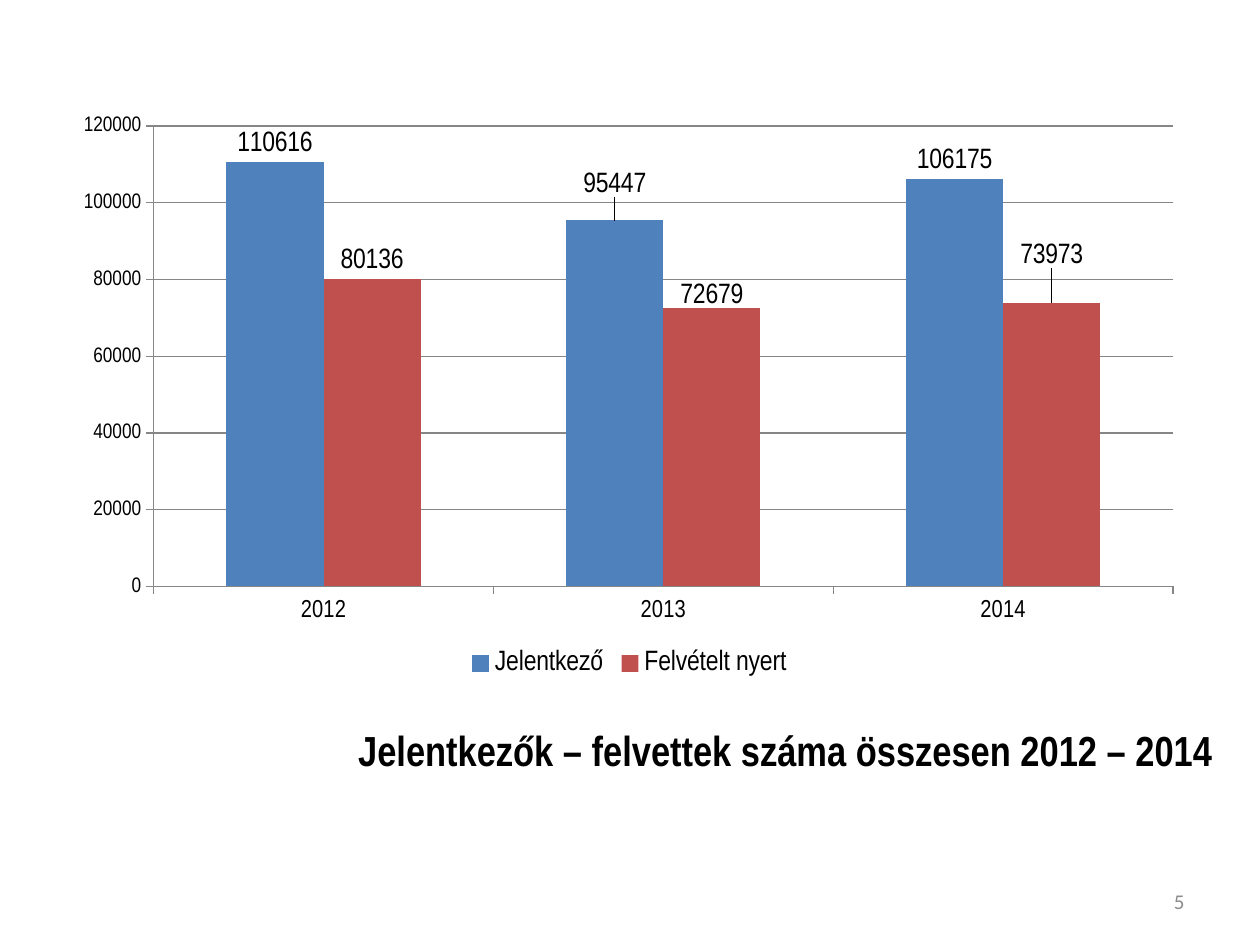
from lxml import etree
from pptx import Presentation
from pptx.chart.data import CategoryChartData
from pptx.dml.color import RGBColor
from pptx.enum.chart import (XL_CHART_TYPE, XL_LABEL_POSITION,
                             XL_LEGEND_POSITION, XL_TICK_MARK)
from pptx.enum.text import MSO_ANCHOR, PP_ALIGN
from pptx.oxml.ns import qn
from pptx.util import Inches, Pt

COLUMNS = XL_CHART_TYPE.COLUMN_CLUSTERED
OUTSIDE_END = XL_LABEL_POSITION.OUTSIDE_END
BOTTOM = XL_LEGEND_POSITION.BOTTOM
OUTSIDE = XL_TICK_MARK.OUTSIDE
MIDDLE = MSO_ANCHOR.MIDDLE
RIGHT = PP_ALIGN.RIGHT

NARROW = "Arial Narrow"
TITLE_ONLY = 5
YEARS = ["2012", "2013", "2014"]
# name, values, colour, vertical label shifts by point (shares of chart height)
SERIES = [
    ("Jelentkező", [110616, 95447, 106175], "4F81BD", {1: -0.03}),
    ("Felvételt nyert", [80136, 72679, 73973], "C0504D", {1: 0.01, 2: -0.05}),
]


def rgb(color):
    return RGBColor.from_string(color)


def set_font(font, size, name=NARROW, color="000000", bold=False):
    font.size = Pt(size)
    font.name = name
    font.bold = bold
    font.color.rgb = rgb(color)


def place(shape, left, top, width, height):
    shape.left, shape.top = Inches(left), Inches(top)
    shape.width, shape.height = Inches(width), Inches(height)


def write(shape, text, **fmt):
    tf = shape.text_frame
    tf.word_wrap = True
    tf.vertical_anchor = MIDDLE
    p = tf.paragraphs[0]
    p.alignment = RIGHT
    r = p.add_run()
    r.text = text
    set_font(r.font, **fmt)


def fill_layout(layout, **settings):
    """Write a manual chart layout; settings follow schema order."""
    manual = etree.SubElement(layout, qn("c:manualLayout"))
    for tag, value in settings.items():
        etree.SubElement(manual, qn(f"c:{tag}")).set("val", str(value))


def format_axis(axis, size):
    axis.major_tick_mark = OUTSIDE
    set_font(axis.tick_labels.font, size)
    axis.format.line.color.rgb = rgb("868686")


def format_series(series, color, shifts):
    series.format.fill.solid()
    series.format.fill.fore_color.rgb = rgb(color)
    labels = series.data_labels
    labels.show_value = True
    labels.position = OUTSIDE_END
    set_font(labels.font, 16)
    for index, shift in shifts.items():
        label = series.points[index].data_label
        label.position = OUTSIDE_END
        set_font(label.font, 16)
    for item, shift in zip(labels._element.findall(qn("c:dLbl")), shifts.values()):
        layout = etree.Element(qn("c:layout"))
        item.insert(1, layout)
        fill_layout(layout, x=0, y=shift)


def add_column_chart(s):
    data = CategoryChartData()
    data.categories = YEARS
    for name, values, *_ in SERIES:
        data.add_series(name, values)
    box = [Inches(n) for n in (0.5, 0.84, 8.99, 4.57)]
    chart = s.shapes.add_chart(COLUMNS, *box, data).chart
    set_font(chart.font, 10, "Calibri")
    chart.has_title = False

    chart.has_legend = True
    chart.legend.position = BOTTOM
    chart.legend.include_in_layout = False
    set_font(chart.legend.font, 16)

    format_axis(chart.category_axis, 14)
    axis = chart.value_axis
    format_axis(axis, 12)
    axis.minimum_scale, axis.maximum_scale, axis.major_unit = 0, 120000, 20000
    axis.has_major_gridlines = True
    axis.major_gridlines.format.line.color.rgb = rgb("868686")

    plot = chart.plots[0]
    plot.gap_width = 150
    plot.overlap = 0
    plot.vary_by_categories = False
    for series, (_, _, color, shifts) in zip(plot.series, SERIES):
        format_series(series, color, shifts)

    area = chart._chartSpace.chart.plotArea
    layout = area.find(qn("c:layout"))
    if layout is None:
        layout = etree.Element(qn("c:layout"))
        area.insert(0, layout)
    fill_layout(layout, layoutTarget="inner", xMode="edge", yMode="edge",
                x=0.08, y=0.035, w=0.9, h=0.8)


def main():
    prs = Presentation()
    prs.slide_width, prs.slide_height = Inches(10), Inches(7.5)
    s = prs.slides.add_slide(prs.slide_layouts[TITLE_ONLY])

    title = s.shapes.title
    place(title, 0.55, 5.4, 9.17, 1.1)
    write(title, "Jelentkezők – felvettek száma összesen 2012 – 2014", size=24, bold=True)

    add_column_chart(s)

    number = s.shapes.add_textbox(0, 0, 0, 0)
    place(number, 7.17, 6.95, 2.33, 0.4)
    write(number, "5", size=12, name="Calibri", color="8C8C8C")
    prs.save("out.pptx")


if __name__ == "__main__":
    main()
